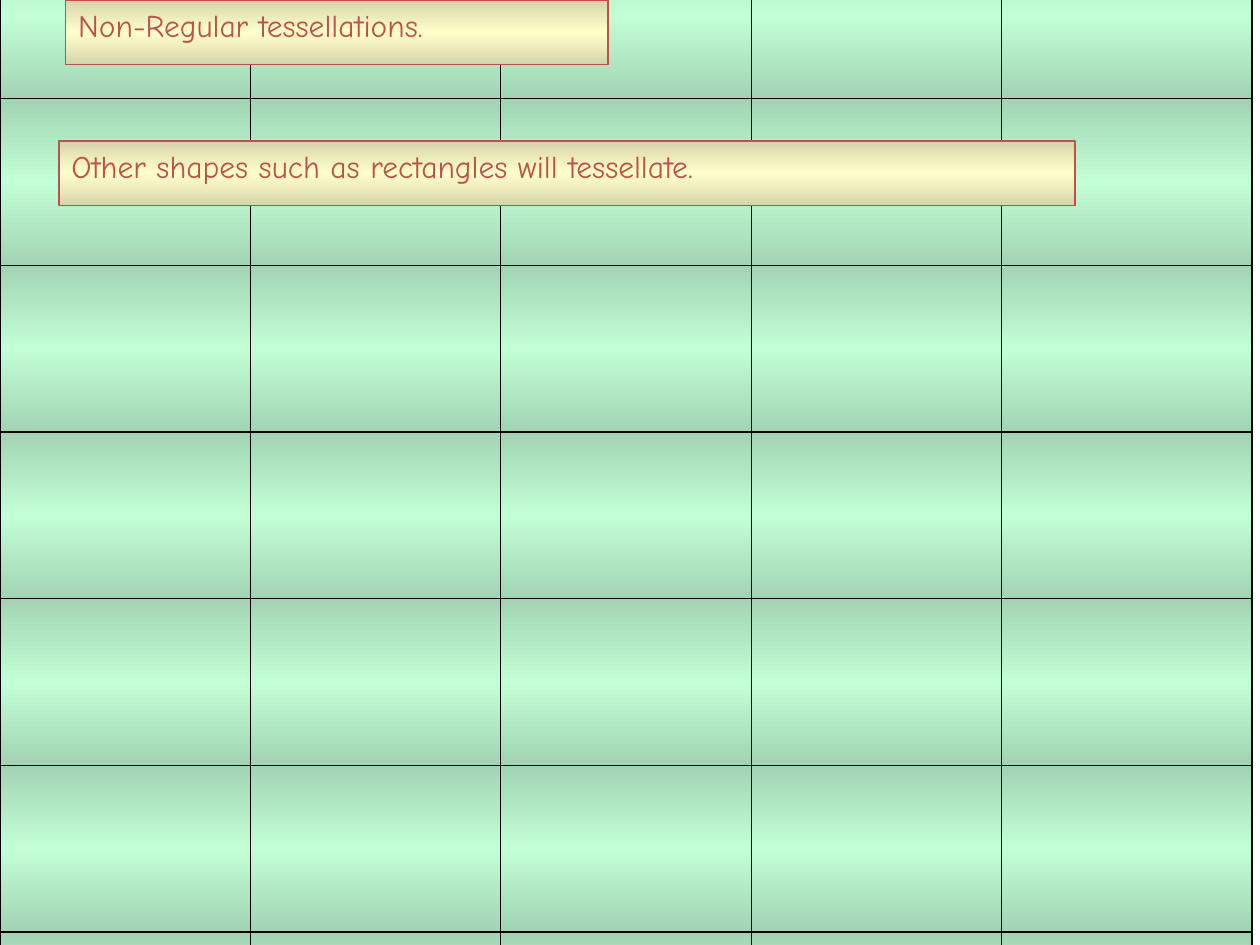
from itertools import product

from lxml.etree import SubElement
from pptx import Presentation
from pptx.dml.color import RGBColor
from pptx.enum.shapes import MSO_SHAPE as Preset
from pptx.enum.text import MSO_ANCHOR as Anchor, MSO_AUTO_SIZE as AutoSize, PP_ALIGN as Align
from pptx.oxml.ns import qn
from pptx.util import Pt

MINT = RGBColor(0xC2, 0xFE, 0xD6)
CREAM = RGBColor(0xFF, 0xFF, 0xCC)
BRICK = RGBColor(0xC0, 0x50, 0x4D)
BLACK = RGBColor(0, 0, 0)

EDGE_SHADE = 66500  # thousandths of a percent
COLUMNS, ROWS = 5, 7
TILE_WIDTH, TILE_HEIGHT = 143.1, 95.25
FIRST_ROW_TOP = -38.9


class TessellationSlide:
    font_name = "Comic Neue"
    font_size = 18
    line_width = 0.75

    def __init__(self, slide):
        self.slide = slide

    def band(self, shape, color, line_color):
        """Fill with a vertical gradient, light in the middle and shaded at both edges."""
        shape.shadow.inherit = False
        shape.fill.gradient()
        shape.fill.gradient_angle = 270
        stops = next(shape._element.spPr.iter(qn("a:gsLst")))
        for stop in list(stops):
            stops.remove(stop)
        for position in (0, 50000, 100000):
            stop = SubElement(stops, qn("a:gs"), pos=str(position))
            tone = SubElement(stop, qn("a:srgbClr"), val=str(color))
            if position != 50000:
                SubElement(tone, qn("a:shade"), val=str(EDGE_SHADE))
        shape.line.color.rgb = line_color
        shape.line.width = Pt(self.line_width)

    def rectangle(self, left, top, width, height):
        return self.slide.shapes.add_shape(
            Preset.RECTANGLE, Pt(left), Pt(top), Pt(width), Pt(height))

    def tile(self, left, top):
        self.band(self.rectangle(left, top, TILE_WIDTH, TILE_HEIGHT), MINT, BLACK)

    def label(self, shape, text):
        self.band(shape, CREAM, BRICK)
        frame = shape.text_frame
        frame.text = text
        frame_format = {
            "word_wrap": True,
            "auto_size": AutoSize.NONE,
            "vertical_anchor": Anchor.TOP,
        }
        for name, value in frame_format.items():
            setattr(frame, name, value)
        paragraph = frame.paragraphs[0]
        paragraph.alignment = Align.LEFT
        font = paragraph.runs[0].font
        for name, value in {"name": self.font_name, "size": Pt(self.font_size)}.items():
            setattr(font, name, value)
        font.color.rgb = BRICK

    def caption(self, text, left, top, width, height):
        self.label(self.rectangle(left, top, width, height), text)

    def title(self, text, **box):
        """Place the title placeholder in front of the tiles."""
        title = self.slide.shapes.title
        for side, length in box.items():
            setattr(title, side, Pt(length))
        self.label(title, text)
        self.slide.shapes._spTree.append(title._element)


def main():
    deck = Presentation()
    deck.slide_width, deck.slide_height = Pt(720), Pt(540)
    page = TessellationSlide(deck.slides.add_slide(deck.slide_layouts[5]))

    for row, column in product(range(ROWS), range(COLUMNS)):
        page.tile(column * TILE_WIDTH, FIRST_ROW_TOP + row * TILE_HEIGHT)

    page.caption("Other shapes such as rectangles will tessellate.", 33.75, 80.6, 580.5, 36.9)
    page.title("Non-Regular tessellations.", left=37.5, top=0, width=310, height=36.9)

    deck.save("out.pptx")


if __name__ == "__main__":
    main()
